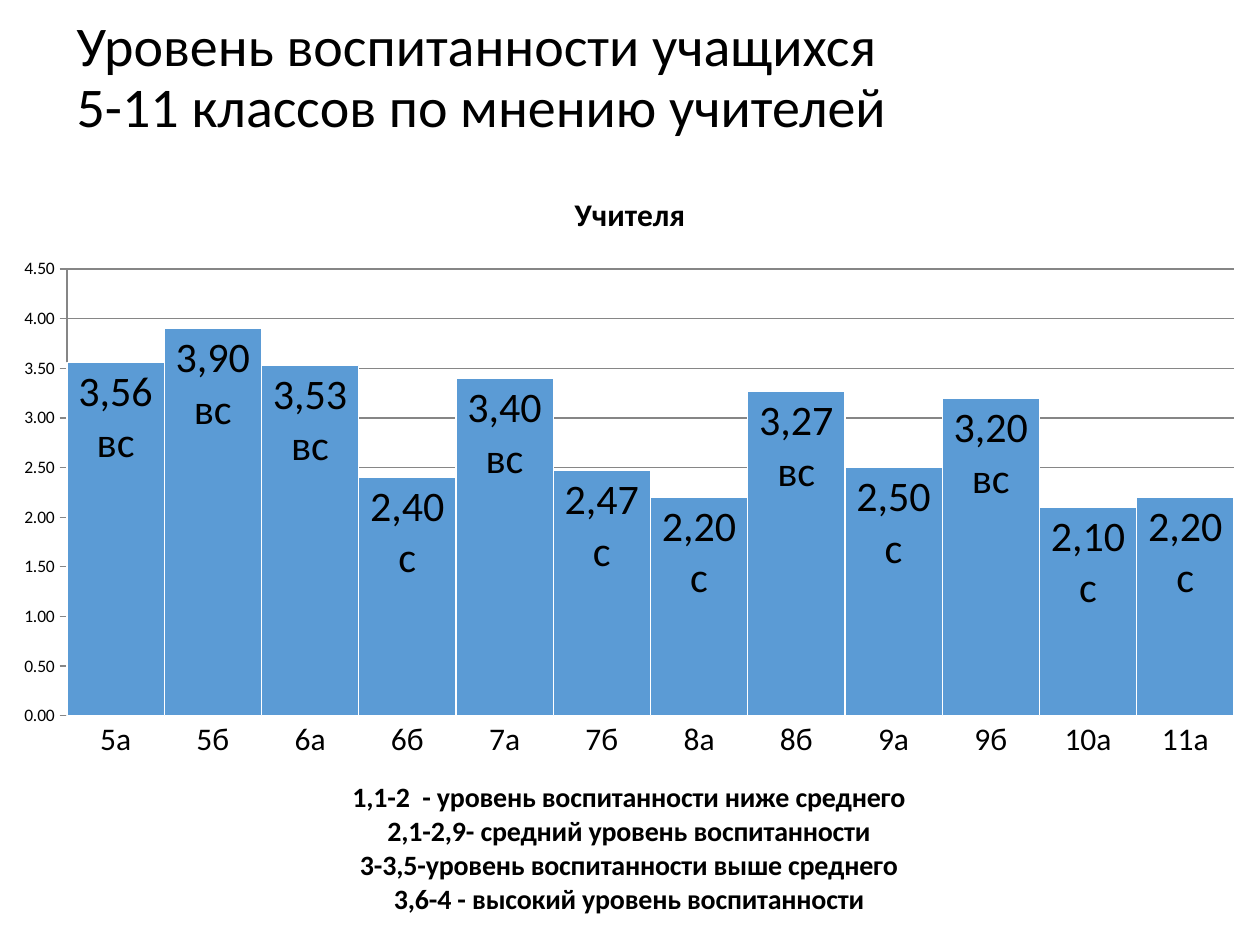
"""Build the slide with the teachers' column chart by class."""
from lxml.etree import SubElement
from pptx import Presentation
from pptx.chart.data import CategoryChartData
from pptx.dml.color import RGBColor
from pptx.enum.chart import XL_CHART_TYPE as ChartType, XL_LABEL_POSITION as LabelPos, XL_TICK_MARK as Tick
from pptx.enum.text import MSO_ANCHOR as Anchor, PP_ALIGN as Align
from pptx.oxml.ns import qn
from pptx.util import Emu, Pt

BLACK = RGBColor(0x00, 0x00, 0x00)
WHITE = RGBColor(0xFF, 0xFF, 0xFF)
GRAY = RGBColor(0x86, 0x86, 0x86)
BLUE = RGBColor(0x5B, 0x9B, 0xD5)
FONT = "Calibri"
PX = 914400 / 126


def px(*lengths):
    return [Emu(round(n * PX)) for n in lengths]


def write(tf, text, size, bold=False, align=Align.CENTER, spacing=None):
    for i, block in enumerate(text.split("\n")):
        p = tf.add_paragraph() if i else tf.paragraphs[0]
        p.alignment = align
        if spacing:
            p.line_spacing = spacing
        for j, line in enumerate(block.split("\v")):
            if j:
                p.add_line_break()
            r = p.add_run()
            r.text = line
            r.font.name, r.font.size, r.font.bold = FONT, Pt(size), bold
            r.font.color.rgb = BLACK


prs = Presentation()
prs.slide_width, prs.slide_height = px(1260, 945)
s = prs.slides.add_slide(prs.slide_layouts[5])

title = s.shapes.title
title.left, title.top, title.width, title.height = px(64, 0, 1134, 158)
title.text_frame.vertical_anchor = Anchor.MIDDLE
write(title.text_frame, "Уровень воспитанности учащихся \v5-11 классов по мнению учителей",
      32, align=Align.LEFT, spacing=0.9)

scores = {"5а": (3.56, "вс"), "5б": (3.9, "вс"), "6а": (3.53, "вс"), "6б": (2.4, "с"),
          "7а": (3.4, "вс"), "7б": (2.47, "с"), "8а": (2.2, "с"), "8б": (3.27, "вс"),
          "9а": (2.5, "с"), "9б": (3.2, "вс"), "10а": (2.1, "с"), "11а": (2.2, "с")}
data = CategoryChartData(number_format="0.00")
data.categories = list(scores)
data.add_series("Учителя", [value for value, level in scores.values()])
chart = s.shapes.add_chart(ChartType.COLUMN_CLUSTERED, *px(0, 165, 1260, 780), data).chart
chart.has_legend = False
chart.font.name, chart.font.size = FONT, Pt(10)
chart.font.color.rgb = BLACK
chart.has_title = True
write(chart.chart_title.text_frame, "Учителя", 18, bold=True)
chart.chart_title.include_in_layout = False

plot_area = chart.plots[0]._element.getparent()
layout = plot_area.find(qn("c:layout"))
if layout is None:
    layout = SubElement(plot_area, qn("c:layout"))
    plot_area.insert(0, layout)
manual = SubElement(layout, qn("c:manualLayout"))
for tag, val in (("layoutTarget", "inner"), ("xMode", "edge"), ("yMode", "edge"),
                 ("x", 67 / 1260), ("y", 104 / 780), ("w", 1167 / 1260), ("h", 447 / 780)):
    SubElement(manual, qn(f"c:{tag}")).set("val", str(val))

cat = chart.category_axis
cat.major_tick_mark = Tick.NONE
cat.tick_labels.font.size = Pt(18)
cat.format.line.fill.background()
write(cat.axis_title.text_frame,
      "1,1-2  - уровень воспитанности ниже среднего\n"
      "2,1-2,9- средний уровень воспитанности\n"
      "3-3,5-уровень воспитанности выше среднего\n"
      "3,6-4 - высокий уровень воспитанности", 16, bold=True)

val = chart.value_axis
val.minimum_scale, val.maximum_scale, val.major_unit = 0, 4.5, 0.5
val.major_tick_mark = Tick.CROSS
val.tick_labels.number_format = "0.00"
val.tick_labels.number_format_is_linked = False
for line in (val.format.line, val.major_gridlines.format.line):
    line.color.rgb = GRAY
    line.width = Pt(0.75)

plot = chart.plots[0]
plot.gap_width = 0
plot.vary_by_categories = False
ser = plot.series[0]
ser.format.fill.solid()
ser.format.fill.fore_color.rgb = BLUE
ser.format.line.color.rgb = WHITE
ser.format.line.width = Pt(0.75)
labels = ser.data_labels
labels.show_value = True
labels.position = LabelPos.INSIDE_END
labels.number_format = "0.00"
labels.number_format_is_linked = False
labels.font.size = Pt(24)
for i, (value, level) in enumerate(scores.values()):
    label = ser.points[i].data_label
    write(label.text_frame, f"{value:.2f}\n{level}".replace(".", ","), 24)
    label.position = LabelPos.INSIDE_END

prs.save("out.pptx")
